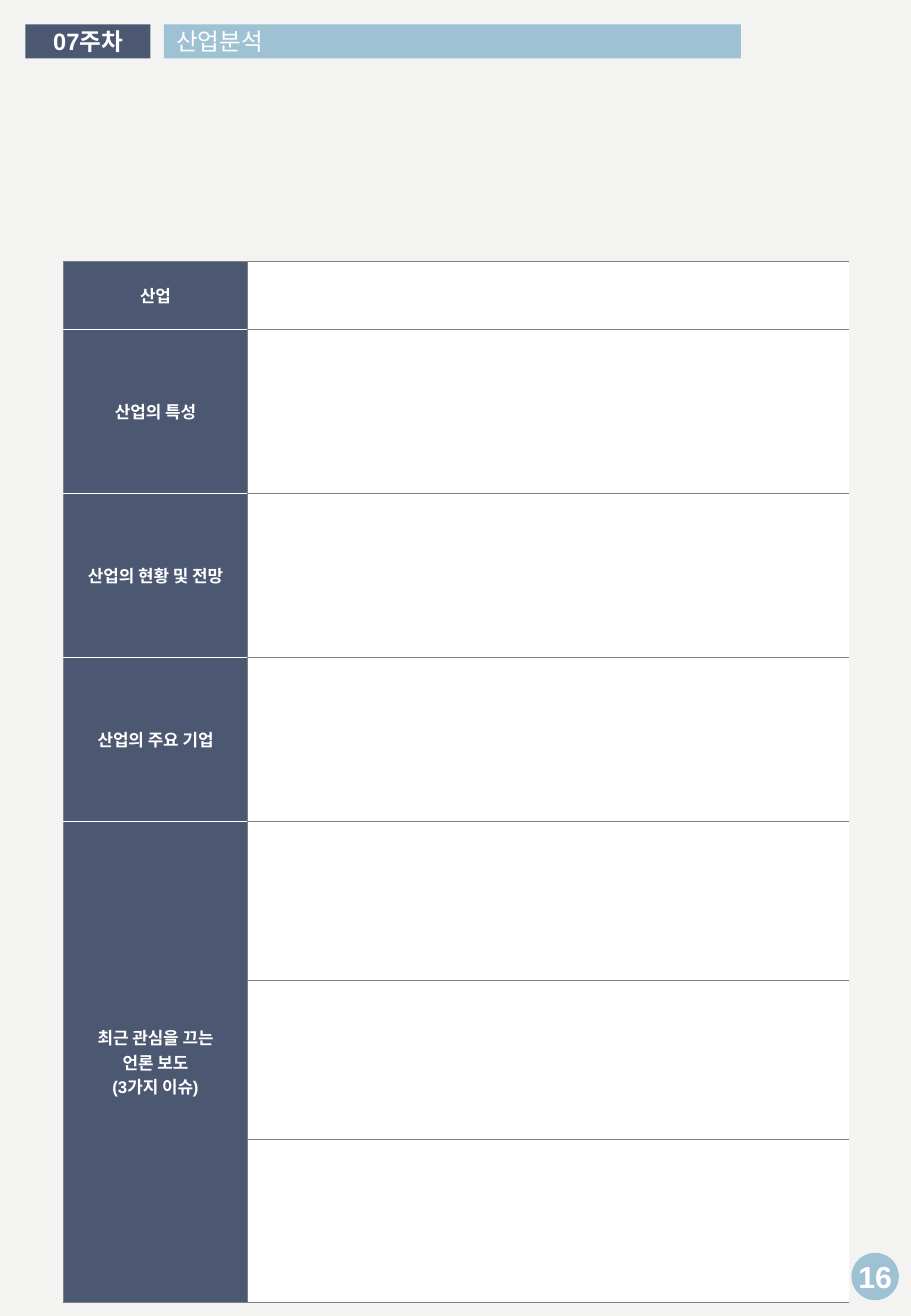
from lxml import etree
from pptx import Presentation
from pptx.dml.color import RGBColor
from pptx.enum.shapes import MSO_SHAPE
from pptx.enum.text import MSO_ANCHOR, PP_ALIGN
from pptx.oxml.ns import qn
from pptx.util import Inches, Pt

COLORS = {"bg": "F3F3F2", "navy": "4C5871", "sky": "9EC1D4",
          "grid": "808080", "white": "FFFFFF"}
FONT = "Arial"
NO_STYLE = "{2D5ABB26-0587-4C30-8999-92F81FD0307C}"
COL_WIDTHS = [1.52, 4.95]
ROW_HEIGHTS = [0.56, 1.35, 1.35, 1.35, 1.31, 1.31, 1.34]
LABELS = [["산업"], ["산업의 특성"], ["산업의 현황 및 전망"], ["산업의 주요 기업"],
          ["최근 관심을 끄는", "언론 보도", "(3가지 이슈)"]]


def color(name):
    return RGBColor.from_string(COLORS[name])


class Worksheet:
    """Holds the slide being built and its text and line style."""

    def __init__(self, prs):
        self.slide = prs.slides.add_slide(prs.slide_layouts[5])
        self.shapes = self.slide.shapes
        fill = self.slide.background.fill
        fill.solid()
        fill.fore_color.rgb = color("bg")

    def block(self, kind, box, fill):
        sp = self.shapes.add_shape(kind, *map(Inches, box))
        sp.shadow.inherit = False
        sp.fill.solid()
        sp.fill.fore_color.rgb = color(fill)
        sp.line.fill.background()

    def add_lines(self, tf, lines, size, bold=True, align=PP_ALIGN.CENTER):
        for i, line in enumerate(lines):
            p = tf.add_paragraph() if i else tf.paragraphs[0]
            p.alignment = align
            r = p.add_run()
            r.text = line
            r.font.name = FONT
            r.font.size = Pt(size)
            r.font.bold = bold
            r.font.color.rgb = color("white")

    def title(self, text, box):
        sp = self.shapes.title
        sp.left, sp.top, sp.width, sp.height = map(Inches, box)
        self.shapes._spTree.append(sp._element)  # in front of its bar
        sp.text_frame.vertical_anchor = MSO_ANCHOR.MIDDLE
        self.add_lines(sp.text_frame, [text], 14, False, PP_ALIGN.LEFT)

    def text(self, text, box, size, wrap=True):
        tf = self.shapes.add_textbox(*map(Inches, box)).text_frame
        tf.word_wrap = wrap
        tf.vertical_anchor = MSO_ANCHOR.MIDDLE
        self.add_lines(tf, [text], size)

    def style_cell(self, cell, fill, borders):
        """Borders map the sides L, R, T, B, in that order, to colour names."""
        tc_pr = cell._tc.get_or_add_tcPr()
        for side, name in borders.items():
            ln = etree.SubElement(tc_pr, qn(f"a:ln{side}"), w=str(Pt(0.5)))
            solid = etree.SubElement(ln, qn("a:solidFill"))
            etree.SubElement(solid, qn("a:srgbClr"), val=COLORS[name])
        cell.fill.solid()
        cell.fill.fore_color.rgb = color(fill)
        cell.vertical_anchor = MSO_ANCHOR.MIDDLE

    def form(self, left, top):
        rows, last = len(ROW_HEIGHTS), len(LABELS) - 1
        frame = self.shapes.add_table(
            rows, 2, Inches(left), Inches(top),
            Inches(sum(COL_WIDTHS)), Inches(sum(ROW_HEIGHTS)))
        table = frame.table
        table.first_row = table.horz_banding = False
        table._tbl.tblPr.find(qn("a:tableStyleId")).text = NO_STYLE
        for col, width in zip(table.columns, COL_WIDTHS):
            col.width = Inches(width)
        for i, height in enumerate(ROW_HEIGHTS):
            table.rows[i].height = Inches(height)
            above = "white" if 0 < i <= last else "grid"
            below = "white" if i < last else "grid"
            self.style_cell(table.cell(i, 0), "navy",
                            {"L": "grid", "R": "grid", "T": above, "B": below})
            self.style_cell(table.cell(i, 1), "white",
                            {"L": "grid", "T": "grid", "B": "grid"})
        table.cell(last, 0).merge(table.cell(rows - 1, 0))
        for i, lines in enumerate(LABELS):
            self.add_lines(table.cell(i, 0).text_frame, lines, 10)


def main():
    prs = Presentation()
    prs.slide_width, prs.slide_height = Inches(7.5), Inches(10.83)
    sheet = Worksheet(prs)
    sheet.block(MSO_SHAPE.RECTANGLE, (1.35, 0.2, 4.75, 0.28), "sky")
    sheet.block(MSO_SHAPE.RECTANGLE, (0.21, 0.2, 1.03, 0.28), "navy")
    sheet.title("산업분석", (1.35, 0.17, 5.13, 0.34))
    sheet.text("07주차", (0.27, 0.17, 0.91, 0.34), 14)
    sheet.form(0.52, 2.15)
    sheet.block(MSO_SHAPE.OVAL, (7.01, 10.31, 0.39, 0.39), "sky")
    sheet.text("16", (6.96, 10.3, 0.49, 0.4), 18, wrap=False)
    prs.save("out.pptx")


if __name__ == "__main__":
    main()
